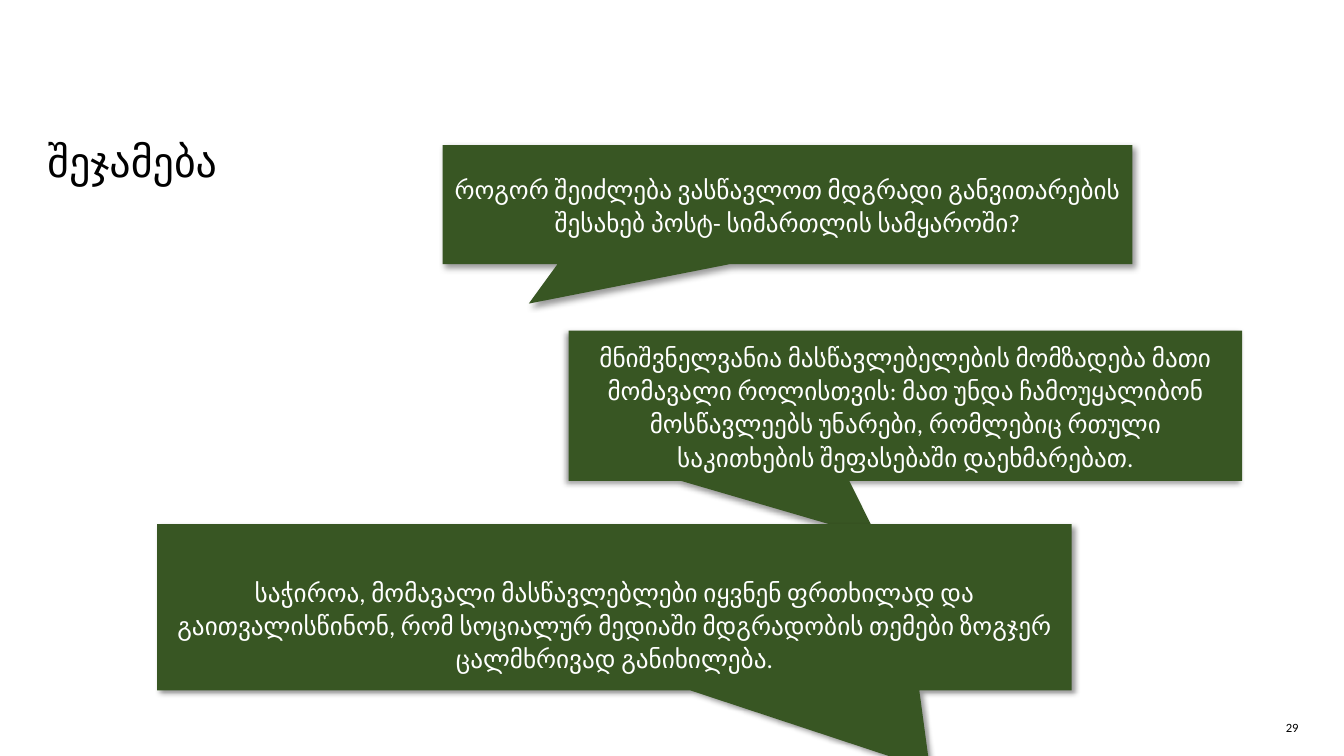
from dataclasses import dataclass

from lxml.etree import SubElement
from pptx import Presentation
from pptx.dml.color import RGBColor
from pptx.enum.shapes import MSO_SHAPE as Shape
from pptx.enum.text import MSO_ANCHOR as Anchor, PP_ALIGN as Align
from pptx.oxml.ns import qn
from pptx.util import Inches, Pt

# Content
TITLE = "შეჯამება"
PAGE_NUMBER = "29"

# Callouts from back to front: text, box, tail tip, shadow angle, top inset
CALLOUTS = [
    ("მნიშვნელვანია მასწავლებელების მომზადება მათი მომავალი როლისთვის: "
     "მათ უნდა ჩამოუყალიბონ მოსწავლეებს უნარები, რომლებიც რთული "
     "საკითხების შეფასებაში დაეხმარებათ.",
     (5.64, 3.28, 6.68, 1.49), (-0.041, 0.883), 135, 0.05),
    ("საჭიროა, მომავალი მასწავლებლები იყვნენ ფრთხილად და "
     "გაითვალისწინონ, რომ სოციალურ მედიაში მდგრადობის თემები ზოგჯერ "
     "ცალმხრივად განიხილება.",
     (1.56, 5.2, 9.07, 1.65), (0.345, 0.976), 45, 0.38),
    ("როგორ შეიძლება ვასწავლოთ მდგრადი განვითარების შესახებ "
     "პოსტ- სიმართლის სამყაროში?",
     (4.39, 1.44, 6.84, 1.18), (-0.375, 0.832), 45, 0.05),
]


@dataclass(frozen=True)
class Theme:
    font: str = "Calibri"
    ink: str = "000000"
    paper: str = "FFFFFF"
    green: str = "385623"
    title_size: int = 30
    body_size: int = 18
    number_size: int = 9


THEME = Theme()


def place(box, bounds):
    box.left, box.top, box.width, box.height = map(Inches, bounds)


def write(box, text, size, color, align, spacing, anchor):
    frame = box.text_frame
    frame.text = text
    frame.word_wrap = True
    frame.vertical_anchor = anchor
    para = frame.paragraphs[0]
    para.alignment = align
    para.line_spacing = spacing
    span = para.runs[0]
    span.font.name = THEME.font
    span.font.size = Pt(size)
    span.font.color.rgb = RGBColor.from_string(color)


def cast_shadow(box, angle):
    box.shadow.inherit = False
    effects = box._element.spPr.find(qn("a:effectLst"))
    shadow = SubElement(effects, qn("a:outerShdw"), blurRad=str(Pt(4)),
                        dist=str(Pt(3)), dir=str(angle * 60000),
                        algn="ctr", rotWithShape="0")
    color = SubElement(shadow, qn("a:srgbClr"), val=THEME.ink)
    SubElement(color, qn("a:alpha"), val="40000")


def add_callout(page, text, bounds, tail, angle, top_inset):
    box = page.shapes.add_shape(Shape.RECTANGULAR_CALLOUT, *map(Inches, bounds))
    box.adjustments[0], box.adjustments[1] = tail
    box.fill.solid()
    box.fill.fore_color.rgb = RGBColor.from_string(THEME.green)
    box.line.fill.background()
    cast_shadow(box, angle)
    write(box, text, THEME.body_size, THEME.paper, Align.CENTER, 1.1, Anchor.MIDDLE)
    box.text_frame.margin_top = Inches(top_inset)


def main():
    deck = Presentation()
    deck.slide_width, deck.slide_height = Inches(13.33), Inches(7.5)
    page = deck.slides.add_slide(deck.slide_layouts[5])

    # Page number
    number = page.shapes.add_textbox(*map(Inches, (12.4, 7.09, 0.48, 0.21)))
    write(number, PAGE_NUMBER, THEME.number_size, THEME.ink, Align.RIGHT, 1.33, Anchor.TOP)
    frame = number.text_frame
    frame.margin_left = frame.margin_right = frame.margin_top = frame.margin_bottom = 0

    # Title
    title = page.shapes.title
    place(title, (0.37, 1.31, 12.28, 0.63))
    write(title, TITLE, THEME.title_size, THEME.ink, Align.LEFT, 0.9, Anchor.MIDDLE)

    # Speech callouts
    for callout in CALLOUTS:
        add_callout(page, *callout)

    deck.save("out.pptx")


if __name__ == "__main__":
    main()
